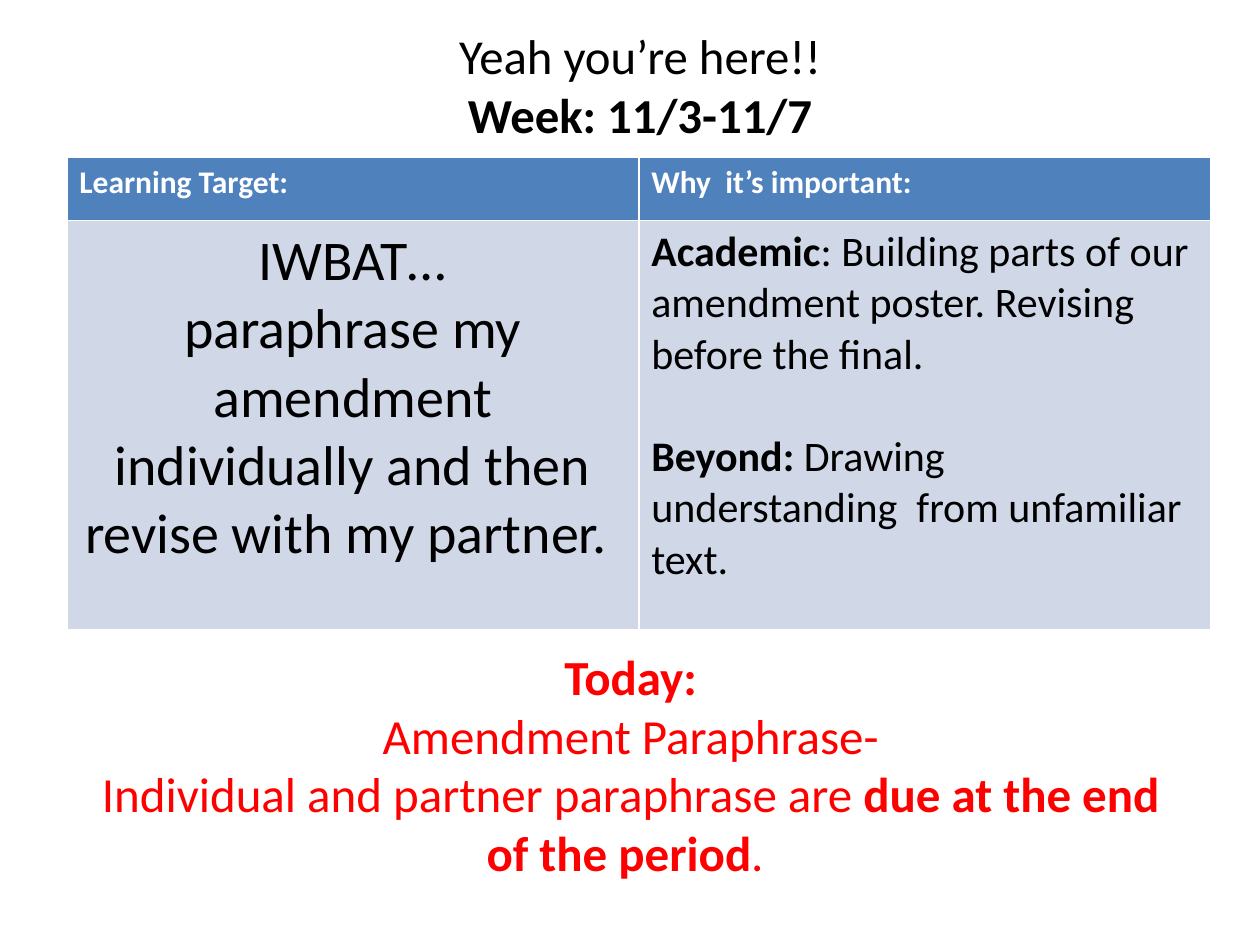
import dataclasses
import typing

import pptx
import pptx.dml.color
import pptx.enum.text
import pptx.util

WIDE, HIGH = 10, 7.5
ALIGN = pptx.enum.text.PP_ALIGN
BREAK = "\n"


@dataclasses.dataclass
class Run:
    text: str
    bold: bool = False


@dataclasses.dataclass
class Para:
    runs: typing.List[Run]
    gap: float = 0


@dataclasses.dataclass
class Look:
    size: float
    color: str = "000000"
    align: ALIGN = ALIGN.CENTER


@dataclasses.dataclass
class Cell:
    row: int
    col: int
    fill: str
    look: Look
    paras: typing.List[Para]


@dataclasses.dataclass
class Box:
    left: float
    top: float
    width: float
    height: float

    def place(self) -> typing.List[int]:
        shares = (self.left, self.top, self.width, self.height)
        sides = (WIDE, HIGH, WIDE, HIGH)
        return [pptx.util.Inches(round(a * b, 2)) for a, b in zip(shares, sides)]


def tint(code: str) -> pptx.dml.color.RGBColor:
    return pptx.dml.color.RGBColor.from_string(code)


def write(frame, look: Look, paras: typing.List[Para]) -> None:
    frame.word_wrap = True
    for i, para in enumerate(paras):
        line = frame.paragraphs[0] if i == 0 else frame.add_paragraph()
        line.alignment = look.align
        line.font.name = "Calibri"
        line.font.size = pptx.util.Pt(look.size)
        line.font.color.rgb = tint(look.color)
        if para.gap:
            line.space_before = pptx.util.Pt(para.gap)
        for part in para.runs:
            if part.text == BREAK:
                line.add_line_break()
                continue
            run = line.add_run()
            run.text = part.text
            run.font.bold = part.bold


def draw_title(slide, box: Box, look: Look, paras: typing.List[Para]) -> None:
    title = slide.shapes.title
    title.left, title.top, title.width, title.height = box.place()
    frame = title.text_frame
    frame.auto_size = pptx.enum.text.MSO_AUTO_SIZE.NONE
    frame.vertical_anchor = pptx.enum.text.MSO_ANCHOR.MIDDLE
    write(frame, look, paras)


def draw_table(slide, box: Box, rows: typing.List[float], cells: typing.List[Cell]) -> None:
    table = slide.shapes.add_table(len(rows), 2, *box.place()).table
    for row, share in zip(table.rows, rows):
        row.height = pptx.util.Inches(share * HIGH)
    for item in cells:
        cell = table.cell(item.row, item.col)
        cell.fill.solid()
        cell.fill.fore_color.rgb = tint(item.fill)
        write(cell.text_frame, item.look, item.paras)


def draw_note(slide, box: Box, look: Look, paras: typing.List[Para]) -> None:
    frame = slide.shapes.add_textbox(*box.place()).text_frame
    write(frame, look, paras)
    frame.auto_size = pptx.enum.text.MSO_AUTO_SIZE.SHAPE_TO_FIT_TEXT


HEAD = Look(18, "FFFFFF", ALIGN.LEFT)
GOAL = Look(32)
WHY = Look(24, align=ALIGN.LEFT)
BLUE, PALE = "4F81BD", "D0D8E8"

TITLE = [Para([Run("Yeah you’re here!!"), Run(BREAK), Run("Week: 11/3-11/7", True)])]
CELLS = [
    Cell(0, 0, BLUE, HEAD, [Para([Run("Learning Target:", True)])]),
    Cell(0, 1, BLUE, HEAD, [Para([Run("Why  it’s important:", True)])]),
    Cell(1, 0, PALE, GOAL, [
        Para([Run("IWBAT…")]),
        Para([Run("paraphrase my amendment individually and then revise with my partner. ")]),
    ]),
    Cell(1, 1, PALE, WHY, [
        Para([Run("Academic", True),
              Run(": Building parts of our amendment poster. Revising before the final.")]),
        Para([Run("Beyond: ", True),
              Run("Drawing understanding  from unfamiliar text.")], gap=29.3),
    ]),
]
TODAY = [
    Para([Run("Today:", True)]),
    Para([Run("Amendment Paraphrase-")]),
    Para([Run("Individual and partner paraphrase are "),
          Run("due at the end of the period", True), Run(". ")]),
]


def main() -> None:
    deck = pptx.Presentation()
    deck.slide_width = pptx.util.Inches(WIDE)
    deck.slide_height = pptx.util.Inches(HIGH)
    slide = deck.slides.add_slide(deck.slide_layouts[0])
    spare = slide.placeholders[1].element
    spare.getparent().remove(spare)
    draw_title(slide, Box(1 / 12, 1 / 45, 0.85, 2 / 15), Look(27.9), TITLE)
    draw_table(slide, Box(0.053, 1 / 6, 0.908, 0.5), [1 / 15, 13 / 30], CELLS)
    draw_note(slide, Box(1 / 15, 0.677, 13 / 15, 0.265), Look(28, "FF0000"), TODAY)
    deck.save("out.pptx")


if __name__ == "__main__":
    main()
